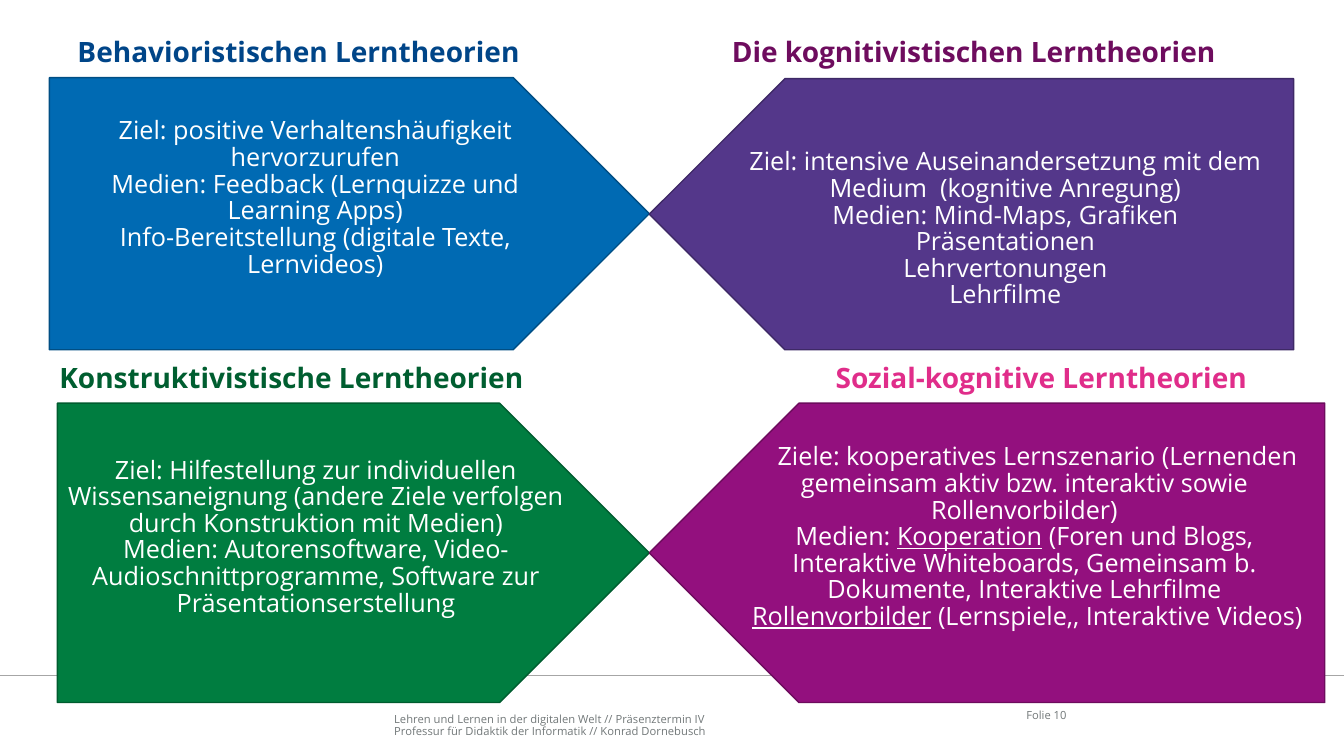
import pptx
import pptx.dml.color
import pptx.enum.shapes
import pptx.enum.text
import pptx.oxml
import pptx.oxml.ns
import pptx.util

Inches = pptx.util.Inches
Pt = pptx.util.Pt
RGBColor = pptx.dml.color.RGBColor
ALIGN = pptx.enum.text.PP_ALIGN
ANCHOR = pptx.enum.text.MSO_ANCHOR
SHAPE = pptx.enum.shapes.MSO_SHAPE

FONT = "Open Sans"
LINE_SPACING = 0.88
BLANK_LINE = 0.3
WHITE = RGBColor(0xFF, 0xFF, 0xFF)
FOOTER_GREY = RGBColor(0x72, 0x78, 0x79)
RULE_GREY = RGBColor(0xA6, 0xA6, 0xA6)
NAVY = RGBColor(0x00, 0x45, 0x88)
BLUE = RGBColor(0x00, 0x6A, 0xB3)
BLUE_EDGE = RGBColor(0x00, 0x4E, 0x84)
PLUM = RGBColor(0x6E, 0x0C, 0x5E)
VIOLET = RGBColor(0x54, 0x37, 0x8A)
VIOLET_EDGE = RGBColor(0x3E, 0x29, 0x66)
DARK_GREEN = RGBColor(0x00, 0x5E, 0x30)
GREEN = RGBColor(0x00, 0x7D, 0x40)
GREEN_EDGE = RGBColor(0x00, 0x5C, 0x2F)
PINK = RGBColor(0xE0, 0x2D, 0x8A)
MAGENTA = RGBColor(0x93, 0x10, 0x7E)
MAGENTA_EDGE = RGBColor(0x6D, 0x0C, 0x5D)

# Content: a paragraph is a string or a list of (text, underlined) runs
FOOTER = ["Lehren und Lernen in der digitalen Welt // Präsenztermin IV",
          "Professur für Didaktik der Informatik // Konrad Dornebusch"]
PAGE = ["Folie 10"]

THEORIES = [
    dict(title="Behavioristischen Lerntheorien", title_color=NAVY,
         title_box=(0.67, 0.34, 4.92, 0.44),
         arrow_box=(0.49, 0.77, 5.95, 2.7), fill=BLUE, edge=BLUE_EDGE,
         points_left=False, gap_above=0, gap_below=BLANK_LINE, indents={},
         text=["Ziel: positive Verhaltenshäufigkeit hervorzurufen",
               "Medien: Feedback (Lernquizze und Learning Apps)",
               "Info-Bereitstellung (digitale Texte, Lernvideos)"]),
    dict(title="Die kognitivistischen Lerntheorien", title_color=PLUM,
         title_box=(7.16, 0.34, 5.12, 0.44),
         arrow_box=(6.44, 0.78, 6.39, 2.69), fill=VIOLET, edge=VIOLET_EDGE,
         points_left=True, gap_above=BLANK_LINE, gap_below=0, indents={},
         text=["Ziel: intensive Auseinandersetzung mit dem Medium  (kognitive Anregung)",
               "Medien: Mind-Maps, Grafiken",
               "Präsentationen",
               "Lehrvertonungen",
               "Lehrfilme"]),
    dict(title="Konstruktivistische Lerntheorien", title_color=DARK_GREEN,
         title_box=(0.49, 3.57, 4.85, 0.44),
         arrow_box=(0.57, 4, 5.87, 2.97), fill=GREEN, edge=GREEN_EDGE,
         points_left=False, gap_above=0, gap_below=BLANK_LINE, indents={},
         text=["Ziel: Hilfestellung zur individuellen Wissensaneignung "
               "(andere Ziele verfolgen durch Konstruktion mit Medien)",
               "Medien: Autorensoftware, Video-Audioschnittprogramme, "
               "Software zur Präsentationserstellung"]),
    dict(title="Sozial-kognitive Lerntheorien", title_color=PINK,
         title_box=(8.19, 3.57, 4.74, 0.44),
         arrow_box=(6.44, 4, 6.7, 2.97), fill=MAGENTA, edge=MAGENTA_EDGE,
         points_left=True, gap_above=0, gap_below=BLANK_LINE,
         indents={0: 0.26, 2: 0.06},
         text=["Ziele: kooperatives Lernszenario (Lernenden gemeinsam aktiv "
               "bzw. interaktiv sowie Rollenvorbilder)",
               [("Medien: ", False), ("Kooperation", True),
                (" (Foren und Blogs, Interaktive Whiteboards, Gemeinsam b. "
                 "Dokumente, Interaktive Lehrfilme", False)],
               [("Rollenvorbilder", True),
                (" (Lernspiele,, Interaktive Videos)", False)]]),
]


def write_text(shape, paragraphs, size, color, bold=False, align=ALIGN.LEFT,
               anchor=ANCHOR.TOP, insets=(0.1, 0.05, 0.1, 0.05), indents=None):
    frame = shape.text_frame
    frame.word_wrap = True
    frame.vertical_anchor = anchor
    (frame.margin_left, frame.margin_top,
     frame.margin_right, frame.margin_bottom) = map(Inches, insets)
    for index, content in enumerate(paragraphs):
        paragraph = frame.paragraphs[0] if index == 0 else frame.add_paragraph()
        paragraph.alignment = align
        paragraph.line_spacing = LINE_SPACING
        if indents and index in indents:
            properties = paragraph._p.get_or_add_pPr()
            properties.set("marL", "0")
            properties.set("indent", str(Inches(indents[index])))
        runs = [(content, False)] if isinstance(content, str) else content
        for text, underlined in runs:
            run = paragraph.add_run()
            run.text = text
            run.font.name = FONT
            run.font.size = Pt(size)
            run.font.bold = bold
            run.font.color.rgb = color
            if underlined:
                run.font.underline = True


def add_text(slide, box, paragraphs, **text_format):
    shape = slide.shapes.add_textbox(*map(Inches, box))
    write_text(shape, paragraphs, **text_format)


def add_arrow(slide, theory):
    shape = slide.shapes.add_shape(SHAPE.PENTAGON, *map(Inches, theory["arrow_box"]))
    shape.shadow.inherit = False
    shape.fill.solid()
    shape.fill.fore_color.rgb = theory["fill"]
    shape.line.color.rgb = theory["edge"]
    shape.line.width = Pt(1)
    if theory["points_left"]:
        shape._element.spPr.find(pptx.oxml.ns.qn("a:xfrm")).set("flipH", "1")
    insets = (0.1, 0.05 + theory["gap_above"], 0.1, 0.05 + theory["gap_below"])
    write_text(shape, theory["text"], size=18, color=WHITE, align=ALIGN.CENTER,
               anchor=ANCHOR.MIDDLE, insets=insets, indents=theory["indents"])


def main():
    presentation = pptx.Presentation()
    presentation.slide_width = Inches(13.33)
    presentation.slide_height = Inches(7.5)
    slide = presentation.slides.add_slide(presentation.slide_layouts[6])

    # Footer with rule and page number
    add_text(slide, (3.91, 7.05, 5.67, 0.27), FOOTER, size=8, color=FOOTER_GREY,
             anchor=ANCHOR.BOTTOM, insets=(0, 0, 0, 0))
    rule = slide.shapes.add_connector(
        pptx.enum.shapes.MSO_CONNECTOR.STRAIGHT,
        0, Inches(6.7), presentation.slide_width, Inches(6.7))
    rule.line.color.rgb = RULE_GREY
    rule.line.width = Pt(1)
    rule._element.spPr.append(pptx.oxml.parse_xml(
        "<a:effectLst %s/>" % pptx.oxml.ns.nsdecls("a")))
    add_text(slide, (9.81, 6.9, 0.77, 0.4), PAGE, size=8, color=FOOTER_GREY,
             align=ALIGN.RIGHT, anchor=ANCHOR.MIDDLE, insets=(0, 0, 0, 0))

    # Four theories, each a heading over an arrow
    for theory in THEORIES:
        add_text(slide, theory["title_box"], [theory["title"]], size=20,
                 color=theory["title_color"], bold=True)
        add_arrow(slide, theory)

    presentation.save("out.pptx")


if __name__ == "__main__":
    main()
